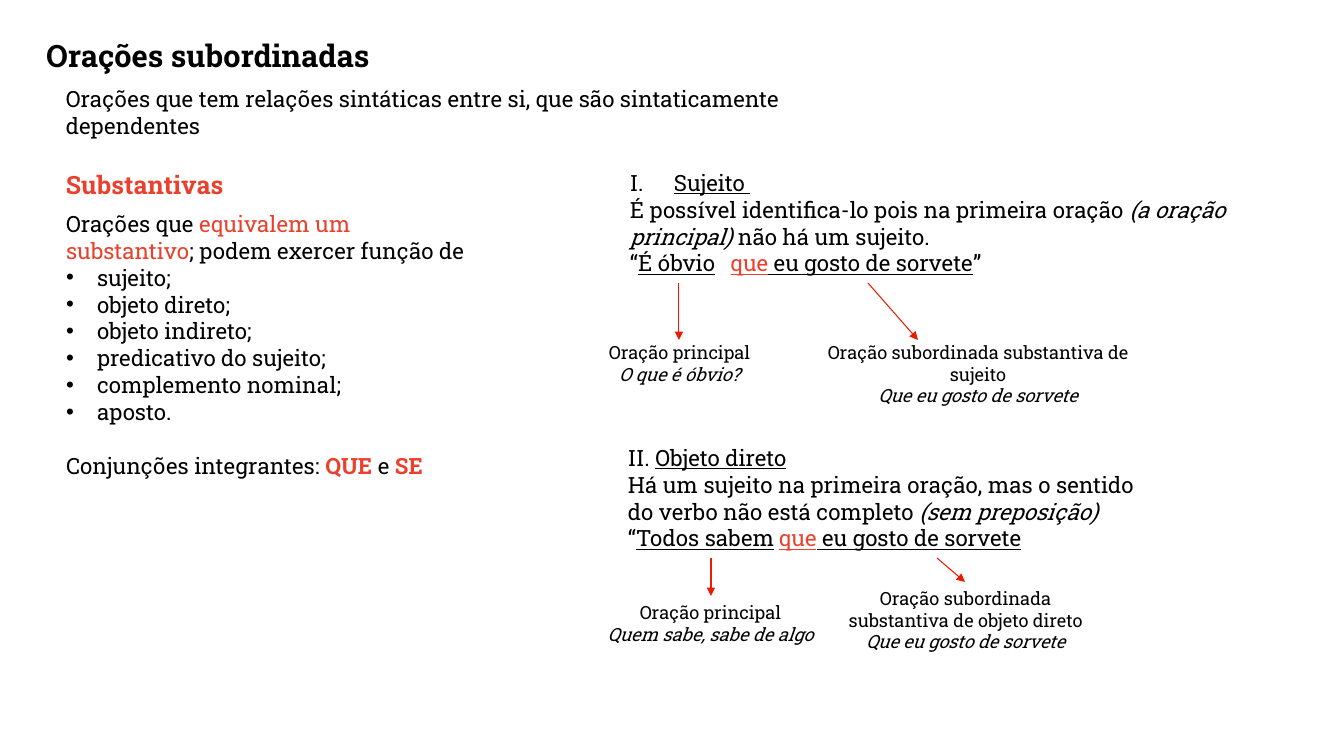
from lxml import etree
from pptx import Presentation
from pptx import util as u
from pptx.dml.color import RGBColor
from pptx.enum import shapes, text
from pptx.oxml.ns import qn

PX = 914400 / 100.8
FONT = "Roboto Slab"
BLACK, CORAL, RED = "000000", "EB402C", "ED1A02"
LEFT, CENTER = text.PP_ALIGN.LEFT, text.PP_ALIGN.CENTER


def px(length):
    return u.Emu(round(length * PX))


def color(value):
    return RGBColor.from_string(value)


def place(shape, box):
    shape.left, shape.top, shape.width, shape.height = map(px, box)


def add_paragraph_marks(paragraph, bullet, indent, tab):
    """Bullet, hanging indent and tab stop of one paragraph."""
    props = paragraph._p.get_or_add_pPr()
    props.set("marL", str(px(indent)))
    props.set("indent", str(-px(indent)))
    if bullet == "I.":
        etree.SubElement(props, qn("a:buAutoNum"), type="romanUcPeriod")
    elif bullet:
        etree.SubElement(props, qn("a:buChar"), char=bullet)
    else:
        etree.SubElement(props, qn("a:buNone"))
    if tab:
        stops = etree.SubElement(props, qn("a:tabLst"))
        etree.SubElement(stops, qn("a:tab"), pos=str(px(tab)), algn="l")


def write_paragraph(paragraph, parts, size, align=LEFT, bullet=None,
                    indent=0, tab=0, before=0):
    """Parts are (words, style); style letters: b, i, u, and c for coral."""
    paragraph.alignment = align
    paragraph.line_spacing = 1.0
    paragraph.space_before = u.Pt(before)
    add_paragraph_marks(paragraph, bullet, indent, tab)
    for words, style in parts:
        run = paragraph.add_run()
        run.text = words
        font = run.font
        font.name, font.size = FONT, u.Pt(size)
        font.bold, font.italic, font.underline = (s in style for s in "biu")
        font.color.rgb = color(CORAL if "c" in style else BLACK)


def fill_text(shape, box, paragraphs, size, align=LEFT):
    """Paragraphs are (parts, options)."""
    place(shape, box)
    frame = shape.text_frame
    frame.word_wrap = True
    frame.auto_size = text.MSO_AUTO_SIZE.NONE
    frame.vertical_anchor = text.MSO_ANCHOR.TOP
    for index, (parts, options) in enumerate(paragraphs):
        paragraph = frame.add_paragraph() if index else frame.paragraphs[0]
        write_paragraph(paragraph, parts, size, align, **options)


def add_text(slide, box, paragraphs, size=16, align=LEFT):
    fill_text(slide.shapes.add_textbox(0, 0, 0, 0), box, paragraphs, size, align)


def add_caption(slide, box, clause, example):
    add_text(slide, box, [([(clause, "")], {}), ([(example, "i")], {})],
             size=13, align=CENTER)


def add_arrow(slide, x1, y1, x2, y2):
    arrow = slide.shapes.add_connector(
        shapes.MSO_CONNECTOR.STRAIGHT, px(x1), px(y1), px(x2), px(y2))
    arrow.line.color.rgb = color(RED)
    arrow.line.width = u.Pt(0.75)
    etree.SubElement(arrow.line._get_or_add_ln(), qn("a:tailEnd"), type="triangle")
    etree.SubElement(arrow._element.spPr, qn("a:effectLst"))


def main():
    prs = Presentation()
    prs.slide_width, prs.slide_height = px(1344), px(756)
    slide = prs.slides.add_slide(prs.slide_layouts[1])
    title, functions = slide.placeholders

    # Heading and definition
    fill_text(title, (36, 32, 400, 47), [([("Orações subordinadas", "b")], {})], 22)
    add_text(slide, (56, 80, 850, 64), [
        ([("Orações que tem relações sintáticas entre si, "
           "que são sintaticamente dependentes", "")], {})])

    # Noun clauses and their functions
    add_text(slide, (56, 164, 200, 40), [([("Substantivas", "bc")], {})], size=18)
    roles = ["sujeito;", "objeto direto;", "objeto indireto;",
             "predicativo do sujeito;", "complemento nominal;", "aposto."]
    fill_text(functions, (56, 205, 434, 281), [
        ([("Orações que ", ""), ("equivalem um substantivo", "c"),
          ("; podem exercer função de", "")], {}),
        *[([(role, "")], {"bullet": "•", "indent": 31}) for role in roles],
        ([("Conjunções integrantes: ", ""), ("QUE", "bc"), (" e ", ""),
          ("SE", "bc")], {"before": 19.2}),
    ], 16)

    # I. Subject
    subordinate = [("\t", ""), ("que", "cu"), (" eu gosto de sorvete", "u")]
    add_text(slide, (620, 164, 701, 119), [
        ([("Sujeito ", "u")], {"bullet": "I.", "indent": 44}),
        ([("É possível identifica-lo pois na primeira oração ", ""),
          ("(a oração principal)", "i"), (" não há um sujeito.", "")], {}),
        ([("“", ""), ("É óbvio", "u"), *subordinate, ("”", "")], {"tab": 107}),
    ])

    # II. Direct object
    add_text(slide, (618, 439, 541, 119), [
        ([("II. ", ""), ("Objeto direto", "u")], {}),
        ([("Há um sujeito na primeira oração, mas o sentido do verbo "
           "não está completo ", ""), ("(sem preposição)", "i")], {}),
        ([("“", ""), ("Todos sabem", "u"), *subordinate], {"tab": 174}),
    ])

    # Arrows from each clause to its caption
    for ends in [(679, 283, 679, 340), (868, 283, 918, 340),
                 (711, 558, 711, 596), (937, 558, 965, 582)]:
        add_arrow(slide, *ends)

    # Captions
    example = "Que eu gosto de sorvete"
    for box, clause, sample in [
        ((588, 336, 183, 54), "Oração principal", "O que é óbvio?"),
        ((793, 336, 370, 76), "Oração subordinada substantiva de sujeito", example),
        ((587, 596, 247, 54), "Oração principal", "Quem sabe, sabe de algo"),
        ((825, 582, 281, 76), "Oração subordinada substantiva de objeto direto",
         example),
    ]:
        add_caption(slide, box, clause, sample)

    prs.save("out.pptx")


if __name__ == "__main__":
    main()
